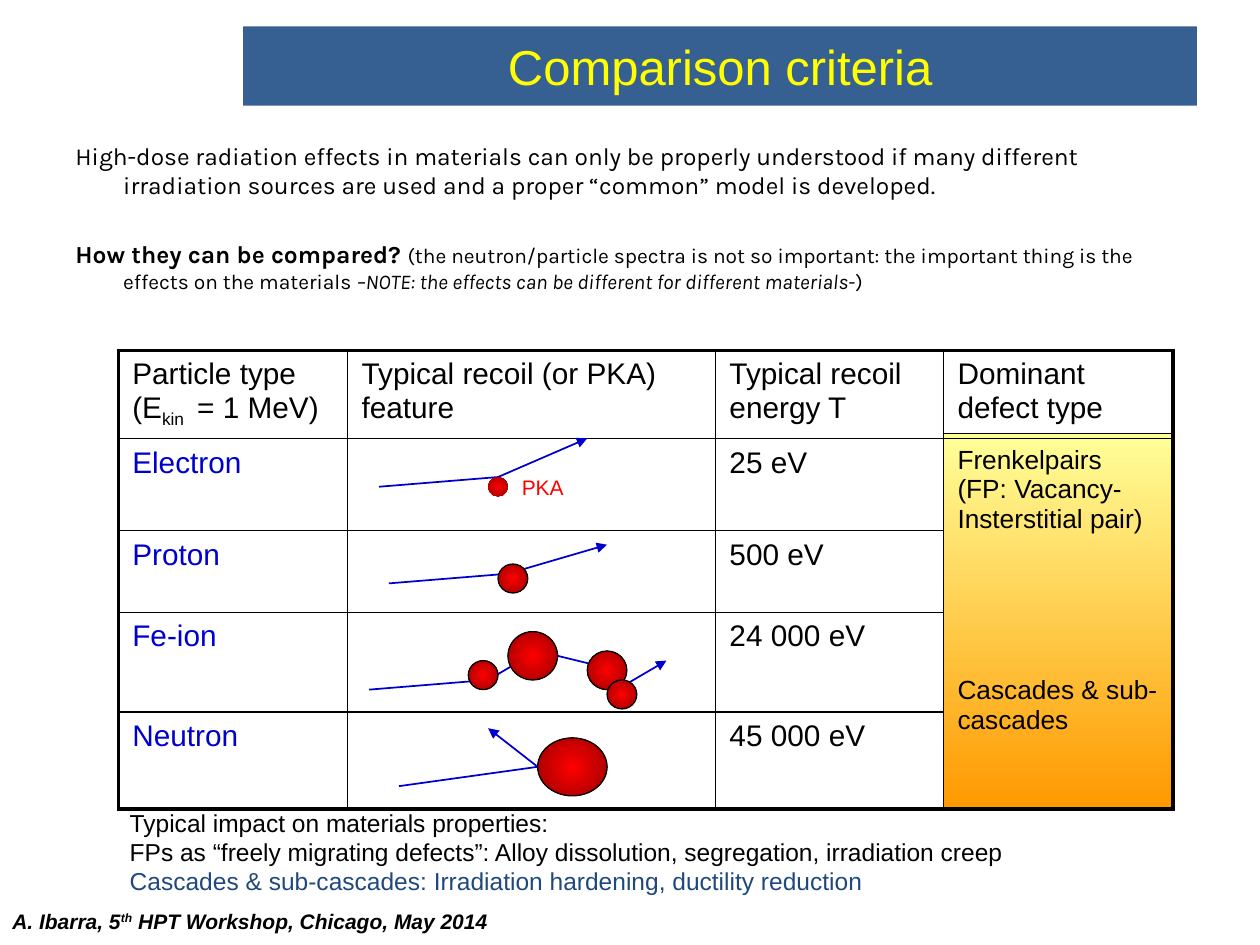
from collections import namedtuple

from lxml.etree import SubElement
from pptx import Presentation
from pptx.dml.color import RGBColor
from pptx.enum.shapes import MSO_SHAPE as Shape
from pptx.enum.text import MSO_ANCHOR as Anchor, PP_ALIGN as Align
from pptx.oxml.ns import qn
from pptx.util import Inches, Pt

BLACK = RGBColor(0x00, 0x00, 0x00)
BANNER = RGBColor(0x37, 0x60, 0x92)
YELLOW = RGBColor(0xFF, 0xFF, 0x00)
BLUE = RGBColor(0x00, 0x00, 0xCC)
NAVY = RGBColor(0x1F, 0x49, 0x7D)
RED = RGBColor(0xFF, 0x00, 0x00)
DARK_RED = RGBColor(0x99, 0x00, 0x00)
PALE_YELLOW = RGBColor(0xFF, 0xFF, 0x99)
ORANGE = RGBColor(0xFF, 0x99, 0x00)

WIDTH, HEIGHT = 10, 7.5
COLUMNS = (1.82, 2.92, 1.81, 1.82)
ROWS = (0.7, 0.73, 0.65, 0.79, 0.77)
HEADERS = ("Particle type\n(E", "Typical recoil (or PKA)\nfeature",
           "Typical recoil energy T", "Dominant defect type")
PARTICLES = (("Electron", "25 eV"), ("Proton", "500 eV"),
             ("Fe-ion", "24 000 eV"), ("Neutron", "45 000 eV"))

# Recoil sketches on one grid of steps: path points, and balls as column, row, width, height
GRID_COLUMNS, GRID_ROWS = 30, 36
TRACKS = (
    ((1, 5), (13, 4), (22, 0)),
    ((2, 15), (14, 14), (24, 11)),
    ((0, 26), (12, 25), (17, 22), (25, 24), (25, 26), (30, 23)),
    ((3, 36), (17, 34), (12, 30)),
)
PKA_BALL = (12, 4, 2, 2)
BALLS = ((13, 13, 3, 3), (10, 23, 3, 3), (14, 20, 5, 5),
         (22, 22, 4, 4), (24, 25, 3, 3), (17, 31, 7, 6))

Box = namedtuple("Box", "left top width height")


def inches(lengths):
    return [Inches(value) for value in lengths]


def add_span(para, text, size, color=BLACK, font="Arial", bold=False, italic=False, baseline=0):
    """Add a run of text; a newline becomes a line break."""
    for index, line in enumerate(text.split("\n")):
        if index:
            para.add_line_break()
        span = para.add_run()
        span.text = line
        span.font.name, span.font.size = font, Pt(size)
        span.font.bold, span.font.italic = bold, italic
        span.font.color.rgb = color
        if baseline:
            span.font._element.set("baseline", str(baseline * 1000))


def add_text_frame(shapes, box, wrap=True, margins=(0.1, 0.05)):
    frame = shapes.add_textbox(*inches(box)).text_frame
    frame.word_wrap = wrap
    frame.margin_left = frame.margin_right = Inches(margins[0])
    frame.margin_top = frame.margin_bottom = Inches(margins[1])
    return frame


def set_gradient(fill, first, last):
    """Blend from first at the top to last at the bottom."""
    fill.gradient()
    fill.gradient_angle = 270
    for stop, color, position in zip(fill.gradient_stops, (first, last), (0, 1)):
        stop.color.rgb = color
        stop.position = position


def add_title(page, box):
    banner = page.shapes.add_shape(Shape.RECTANGLE, *inches(box))
    banner.shadow.inherit = False
    banner.fill.solid()
    banner.fill.fore_color.rgb = BANNER
    banner.line.fill.background()
    banner.text_frame.vertical_anchor = Anchor.MIDDLE
    para = banner.text_frame.paragraphs[0]
    para.alignment = Align.CENTER
    add_span(para, "Comparison criteria", 28, YELLOW)


def add_introduction(page, box):
    frame = add_text_frame(page.shapes, box)
    claim, question = frame.paragraphs[0], frame.add_paragraph()
    for para in (claim, question):
        properties = para._p.get_or_add_pPr()
        properties.set("marL", str(Inches(0.38)))
        properties.set("indent", str(-Inches(0.38)))
    question.space_before = Pt(22.5)
    add_span(claim, "High-dose radiation effects in materials can only be properly understood if "
             "many different irradiation sources are used and a proper “common” model is "
             "developed.", 14, font="Karla")
    add_span(question, "How they can be compared? ", 14, font="Karla", bold=True)
    add_span(question, "(the neutron/particle spectra is not so important: the important thing "
             "is the effects on the materials ", 12, font="Karla")
    add_span(question, "–NOTE: the effects can be different for different materials-", 12,
             font="Karla", italic=True)
    add_span(question, ")", 12, font="Karla")


def set_borders(cell, row, column):
    """Thin lines inside the table, thick ones round its edge."""
    in_merged_cell = column == 3 and row > 0
    edges = {"L": column == 0, "R": column == len(COLUMNS) - 1,
             "T": row == 0, "B": row == len(ROWS) - 1 or in_merged_cell}
    properties = cell._tc.get_or_add_tcPr()
    for side, outer in edges.items():
        line = SubElement(properties, qn(f"a:ln{side}"), w=str(Pt(2.25 if outer else 1)))
        fill = SubElement(line, qn("a:solidFill"))
        SubElement(fill, qn("a:srgbClr"), val=str(BLACK))


def add_comparison_table(page, box):
    shade_top = box.top + ROWS[0] - 0.04
    shade = Box(box.left + sum(COLUMNS[:3]), shade_top, COLUMNS[3],
                box.top + box.height - shade_top)
    panel = page.shapes.add_shape(Shape.RECTANGLE, *inches(shade))
    panel.shadow.inherit = False
    set_gradient(panel.fill, PALE_YELLOW, ORANGE)
    panel.line.color.rgb, panel.line.width = BLACK, Pt(0.75)

    table = page.shapes.add_table(len(ROWS), len(COLUMNS), *inches(box)).table
    table.first_row = table.horz_banding = False
    for column, width in zip(table.columns, COLUMNS):
        column.width = Inches(width)
    for row, height in zip(table.rows, ROWS):
        row.height = Inches(height)
    for row in range(len(ROWS)):
        for column in range(len(COLUMNS)):
            cell = table.cell(row, column)
            cell.margin_left = cell.margin_right = Inches(0.11)
            cell.margin_top, cell.margin_bottom = Inches(0.06), Inches(0.01)
            set_borders(cell, row, column)
            cell.fill.background()

    for column, text in enumerate(HEADERS):
        add_span(table.cell(0, column).text_frame.paragraphs[0], text, 17)
    energy = table.cell(0, 0).text_frame.paragraphs[0]
    add_span(energy, "kin ", 17, baseline=-25)
    add_span(energy, " = 1 MeV)", 17)
    for row, (particle, recoil) in enumerate(PARTICLES, 1):
        add_span(table.cell(row, 0).text_frame.paragraphs[0], particle, 17, BLUE)
        add_span(table.cell(row, 2).text_frame.paragraphs[0], recoil, 17)

    defects = table.cell(1, 3)
    defects.merge(table.cell(4, 3))
    add_span(defects.text_frame.paragraphs[0],
             "Frenkelpairs\n(FP: Vacancy-Insterstitial pair)", 15)
    cascades = defects.text_frame.add_paragraph()
    cascades.space_before = Pt(81.5)
    add_span(cascades, "Cascades & sub-cascades", 15)


def add_track(group, points):
    start, *turns = [inches(point) for point in points]
    builder = group.shapes.build_freeform(*start)
    builder.add_line_segments(turns, close=False)
    track = builder.convert_to_shape()
    track.shadow.inherit = False
    track.fill.background()
    track.line.color.rgb, track.line.width = BLUE, Pt(1)
    SubElement(track.line._get_or_add_ln(), qn("a:tailEnd"), type="triangle")


def add_ball(group, box, outlined=True):
    ball = group.shapes.add_shape(Shape.OVAL, *inches(box))
    ball.shadow.inherit = False
    set_gradient(ball.fill, RED, DARK_RED)
    gradient = ball._element.spPr.find(qn("a:gradFill"))
    gradient.remove(gradient.find(qn("a:lin")))
    radial = SubElement(gradient, qn("a:path"), path="circle")
    SubElement(radial, qn("a:fillToRect"), l="50000", t="50000", r="50000", b="50000")
    if outlined:
        ball.line.color.rgb, ball.line.width = BLACK, Pt(0.75)
    else:
        ball.line.fill.background()


def add_recoil_sketches(page, box):
    step_x, step_y = box.width / GRID_COLUMNS, box.height / GRID_ROWS

    def place(column, row):
        return box.left + column * step_x, box.top + row * step_y

    group = page.shapes.add_group_shape()
    for track in TRACKS:
        add_track(group, [place(*point) for point in track])
    for ball in (PKA_BALL, *BALLS):
        column, row, across, down = ball
        ball_box = Box(*place(column, row), across * step_x, down * step_y)
        add_ball(group, ball_box, outlined=ball != PKA_BALL)
    label = add_text_frame(group.shapes, Box(*place(14, 3), 0.56, 0.31), False, (0.11, 0.06))
    add_span(label.paragraphs[0], "PKA", 12, RED)


def add_impact(page, box):
    frame = add_text_frame(page.shapes, box, margins=(0.11, 0.06))
    add_span(frame.paragraphs[0], "Typical impact on materials properties:\nFPs as “freely "
             "migrating defects”: Alloy dissolution, segregation, irradiation creep", 14)
    add_span(frame.add_paragraph(), "Cascades & sub-cascades: Irradiation hardening, "
             "ductility reduction", 14, NAVY)


def add_footer(page, box):
    para = add_text_frame(page.shapes, box, wrap=False).paragraphs[0]
    for text, baseline in (("A. Ibarra, 5", 0), ("th", 30),
                           (" HPT Workshop, Chicago, May 2014", 0)):
        add_span(para, text, 12, bold=True, italic=True, baseline=baseline)


def main():
    deck = Presentation()
    deck.slide_width, deck.slide_height = Inches(WIDTH), Inches(HEIGHT)
    page = deck.slides.add_slide(deck.slide_layouts[6])
    add_footer(page, Box(0, 7.16, 4.07, 0.3))
    add_title(page, Box(1.93, 0.21, 7.57, 0.63))
    add_introduction(page, Box(0.5, 1.07, 9, 6.05))
    add_comparison_table(page, Box(0.94, 2.78, sum(COLUMNS), sum(ROWS)))
    add_recoil_sketches(page, Box(2.93, 3.48, 2.36, 2.76))
    add_impact(page, Box(0.92, 6.35, 9.2, 0.82))
    deck.save("out.pptx")


if __name__ == "__main__":
    main()
